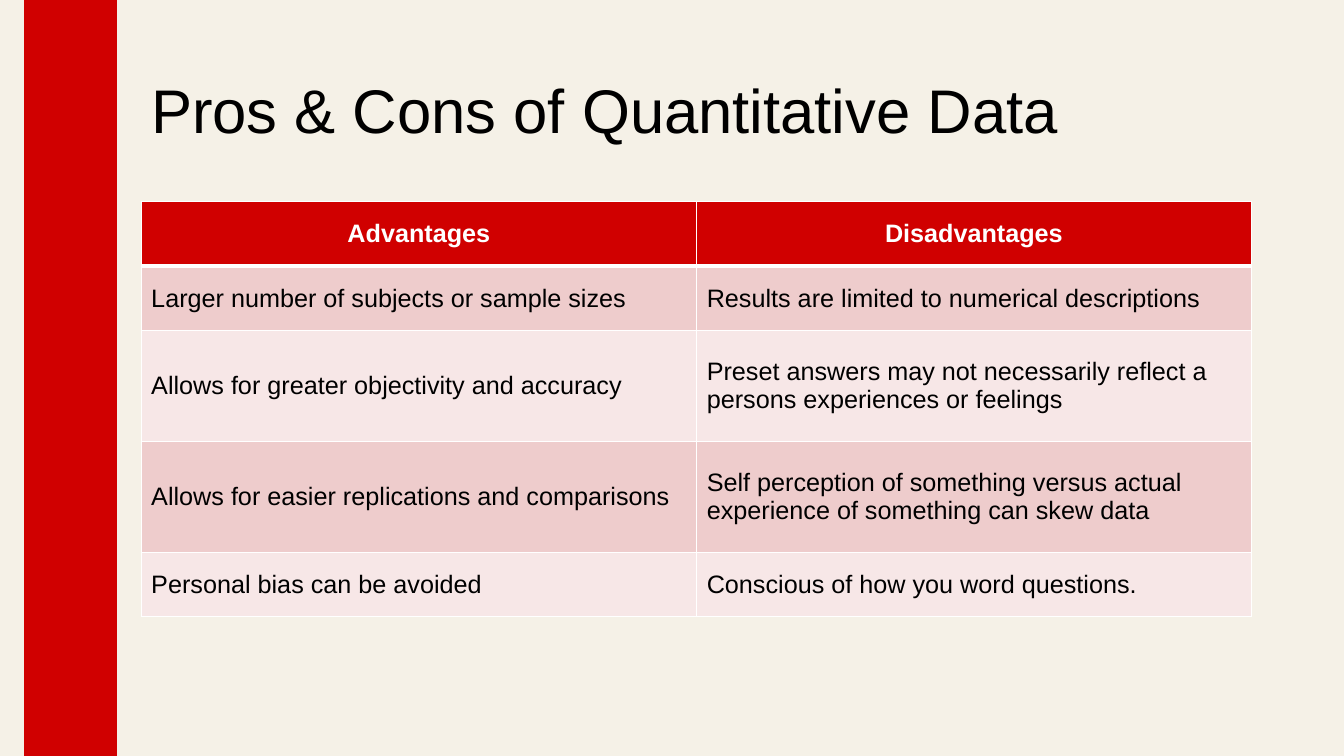
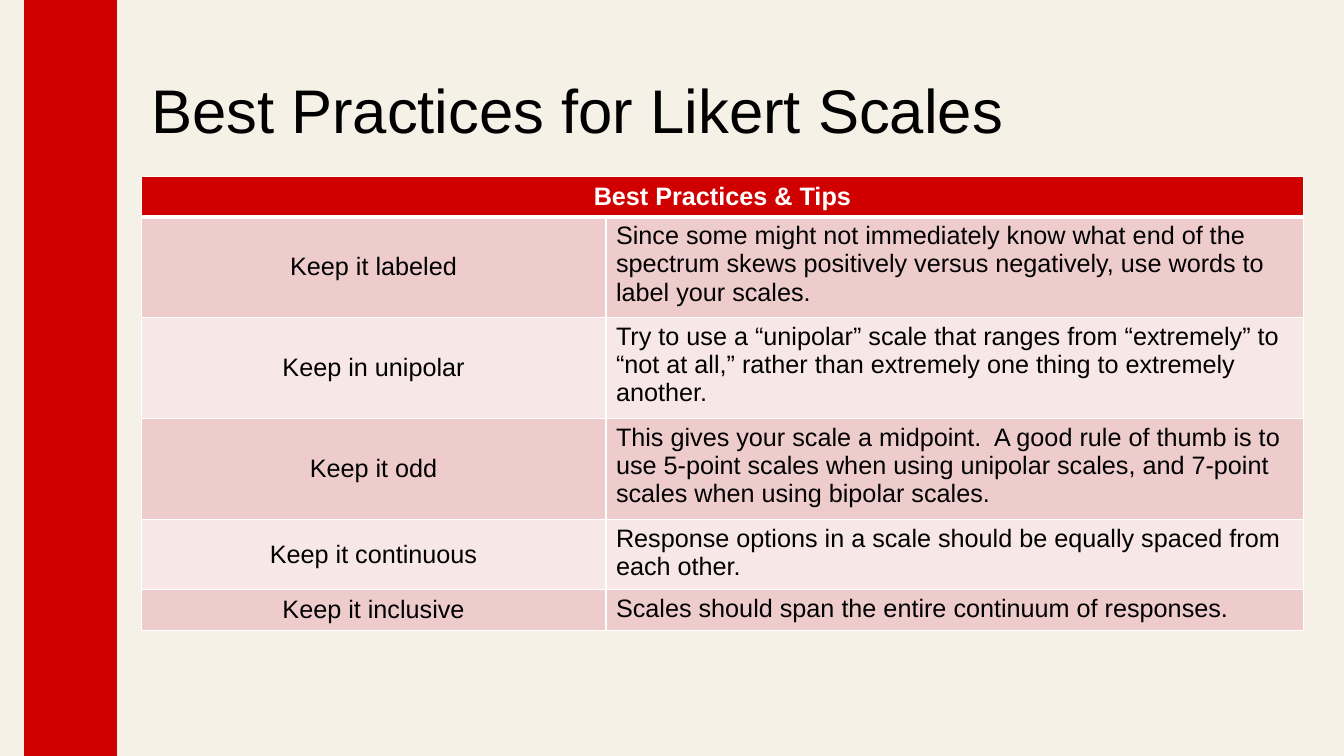
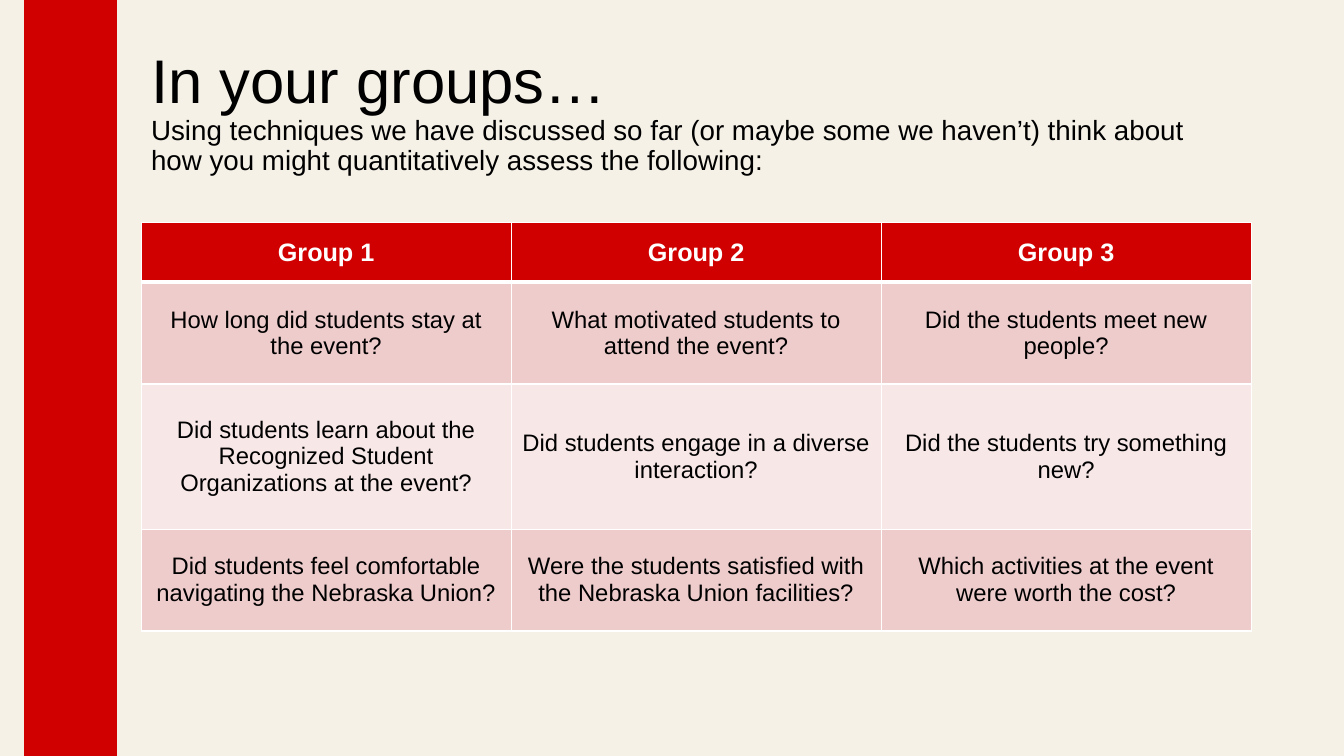
from dataclasses import dataclass

from lxml import etree
from pptx import Presentation
from pptx.dml.color import RGBColor
from pptx.enum.shapes import MSO_SHAPE
from pptx.enum.text import MSO_ANCHOR, PP_ALIGN
from pptx.oxml.ns import qn
from pptx.util import Pt

RECTANGLE = MSO_SHAPE.RECTANGLE
TOP, MIDDLE = MSO_ANCHOR.TOP, MSO_ANCHOR.MIDDLE
LEFT, CENTER = PP_ALIGN.LEFT, PP_ALIGN.CENTER
PX = 9144
SLIDE_WIDTH, SLIDE_HEIGHT = 1333, 750
CONTENT_LEFT = 140


@dataclass(frozen=True)
class Theme:
    font: str = "Arial"
    background: str = "F5F1E7"
    accent: str = "D00000"
    row_fills: tuple = ("EECCCC", "F7E7E7")
    text: str = "000000"
    light: str = "FFFFFF"
    title_size: float = 44
    subtitle_size: float = 19.8
    table_size: float = 18
    small_table_size: float = 17
    border: int = 1
    header_border: int = 3


THEME = Theme()


def write_text(paragraph, text, size, color=THEME.text, bold=False,
               align=LEFT, line_spacing=None):
    paragraph.alignment = align
    paragraph.line_spacing = line_spacing
    run = paragraph.add_run()
    run.text = text
    run.font.name = THEME.font
    run.font.size = Pt(size)
    run.font.bold = bold
    run.font.color.rgb = RGBColor.from_string(color)


def draw_border(cell, side, width):
    properties = cell._tc.get_or_add_tcPr()
    line = etree.SubElement(properties, qn(f"a:ln{side}"), w=str(Pt(width)))
    fill = etree.SubElement(line, qn("a:solidFill"))
    etree.SubElement(fill, qn("a:srgbClr"), val=THEME.light)


SLIDES = [
    {
        "title": "Pros & Cons of Quantitative Data",
        "top": 200,
        "columns": [551, 550],
        "row_heights": [64, 64, 110, 110, 64],
        "formats": [(LEFT, MIDDLE), (LEFT, MIDDLE)],
        "body_size": THEME.table_size,
        "rows": [
            ["Advantages", "Disadvantages"],
            ["Larger number of subjects or sample sizes",
             "Results are limited to numerical descriptions"],
            ["Allows for greater objectivity and accuracy",
             "Preset answers may not necessarily reflect a persons experiences or feelings"],
            ["Allows for easier replications and comparisons",
             "Self perception of something versus actual experience of something can skew data"],
            ["Personal bias can be avoided", "Conscious of how you word questions."],
        ],
    },
    {
        "title": "Best Practices for Likert Scales",
        "top": 175,
        "columns": [461, 692],
        "row_heights": [37, 94, 94, 94, 66, 37],
        "formats": [(CENTER, MIDDLE), (LEFT, TOP)],
        "body_size": THEME.table_size,
        "rows": [
            ["Best Practices & Tips"],
            ["Keep it labeled",
             "Since some might not immediately know what end of the spectrum skews "
             "positively versus negatively, use words to label your scales."],
            ["Keep in unipolar",
             "Try to use a “unipolar” scale that ranges from “extremely” to “not at all,” "
             "rather than extremely one thing to extremely another."],
            ["Keep it odd",
             "This gives your scale a midpoint.  A good rule of thumb is to use 5-point scales "
             "when using unipolar scales, and 7-point scales when using bipolar scales."],
            ["Keep it continuous",
             "Response options in a scale should be equally spaced from each other."],
            ["Keep it inclusive", "Scales should span the entire continuum of responses."],
        ],
    },
    {
        "title": "In your groups…",
        "subtitle": "Using techniques we have discussed so far (or maybe some we haven’t) "
                    "think about how you might quantitatively assess the following:",
        "top": 221,
        "columns": [367, 367, 367],
        "row_heights": [59, 101, 144, 101],
        "formats": [(CENTER, MIDDLE)] * 3,
        "body_size": THEME.small_table_size,
        "rows": [
            ["Group 1", "Group 2", "Group 3"],
            ["How long did students stay at the event?",
             "What motivated students to attend the event?",
             "Did the students meet new people?"],
            ["Did students learn about the Recognized Student Organizations at the event?",
             "Did students engage in a diverse interaction?",
             "Did the students try something new?"],
            ["Did students feel comfortable navigating the Nebraska Union?",
             "Were the students satisfied with the Nebraska Union facilities?",
             "Which activities at the event were worth the cost?"],
        ],
    },
]

presentation = Presentation()
presentation.slide_width = SLIDE_WIDTH * PX
presentation.slide_height = SLIDE_HEIGHT * PX
master_fill = presentation.slide_master.background.fill
master_fill.solid()
master_fill.fore_color.rgb = RGBColor.from_string(THEME.background)

for content in SLIDES:
    slide = presentation.slides.add_slide(presentation.slide_layouts[6])

    band = slide.shapes.add_shape(RECTANGLE, 24 * PX, 0, 92 * PX, SLIDE_HEIGHT * PX)
    band.shadow.inherit = False
    band.fill.solid()
    band.fill.fore_color.rgb = RGBColor.from_string(THEME.accent)
    band.line.fill.background()

    title_box = slide.shapes.add_textbox(CONTENT_LEFT * PX, 40 * PX, 1101 * PX, 145 * PX)
    title_frame = title_box.text_frame
    title_frame.word_wrap = True
    title_frame.vertical_anchor = MIDDLE
    title = title_frame.paragraphs[0]
    write_text(title, content["title"], size=THEME.title_size, line_spacing=0.9)
    if "subtitle" in content:
        title.add_line_break()
        write_text(title, content["subtitle"], size=THEME.subtitle_size, line_spacing=0.9)

    rows, columns, heights = content["rows"], content["columns"], content["row_heights"]
    table = slide.shapes.add_table(
        len(rows), len(columns), CONTENT_LEFT * PX, content["top"] * PX,
        sum(columns) * PX, sum(heights) * PX).table
    for column, width in zip(table.columns, columns):
        column.width = width * PX
    for row, height in zip(table.rows, heights):
        row.height = height * PX
    if len(rows[0]) == 1:
        table.cell(0, 0).merge(table.cell(0, len(columns) - 1))

    for row_index, texts in enumerate(rows):
        is_header = row_index == 0
        fill_color = THEME.accent if is_header else THEME.row_fills[(row_index - 1) % 2]
        for column_index, (align, anchor) in enumerate(content["formats"]):
            cell = table.cell(row_index, column_index)
            for side in "LRTB":
                meets_header = (row_index, side) in ((0, "B"), (1, "T"))
                draw_border(cell, side, THEME.header_border if meets_header else THEME.border)
            cell.fill.solid()
            cell.fill.fore_color.rgb = RGBColor.from_string(fill_color)
            cell.vertical_anchor = MIDDLE if is_header else anchor
            if column_index < len(texts):
                write_text(
                    cell.text_frame.paragraphs[0], texts[column_index],
                    size=THEME.table_size if is_header else content["body_size"],
                    color=THEME.light if is_header else THEME.text,
                    bold=is_header, align=CENTER if is_header else align)

presentation.save("out.pptx")
